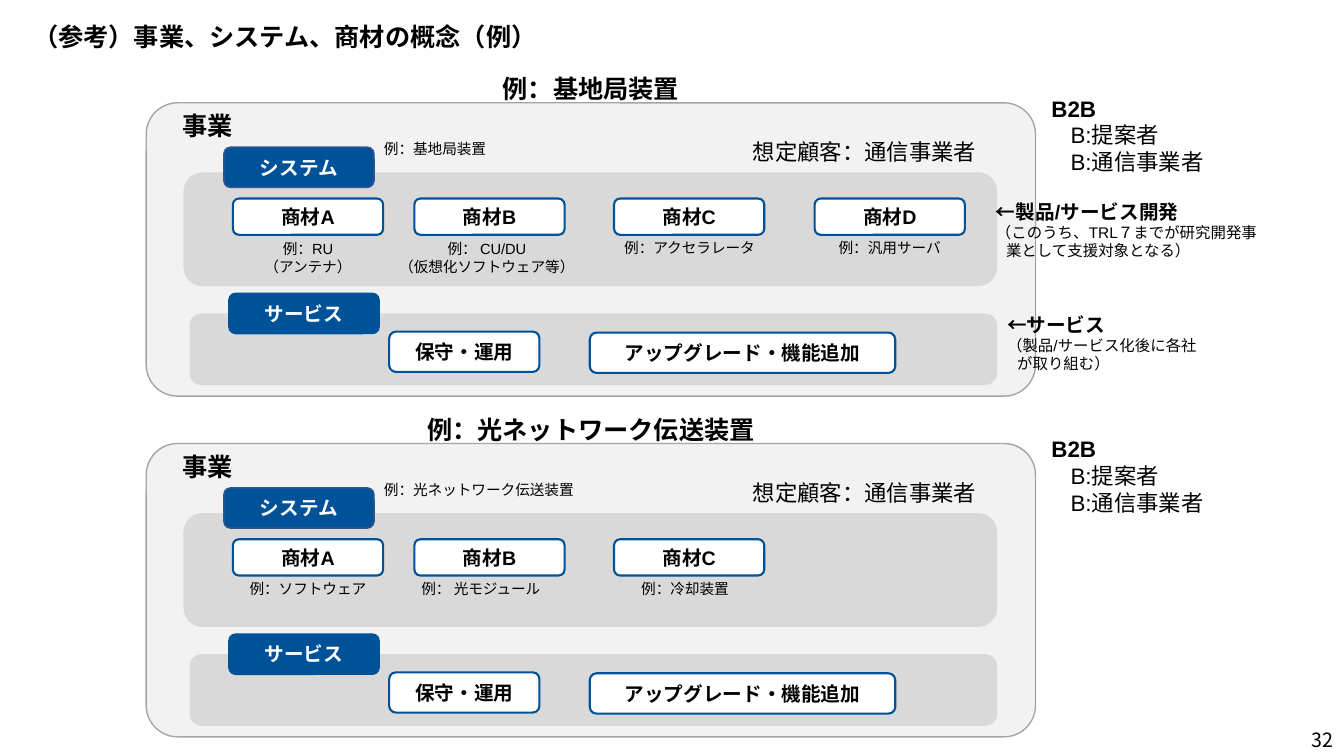
"""Build the slide on businesses, systems and products for two network examples."""
import pptx
import pptx.dml.color
import pptx.enum.shapes
import pptx.enum.text
import pptx.oxml
import pptx.oxml.ns
import pptx.util

COLORS = {
    "black": "000000", "white": "FFFFFF", "panel": "F2F2F2", "panel_line": "A5A5A5",
    "band": "D9D9D9", "blue": "005298", "system_line": "325491",
}
GRID = pptx.util.Inches(0.1)
ASIAN_FONT = "Noto Sans CJK JP"
LEFT = pptx.enum.text.PP_ALIGN.LEFT
CENTER = pptx.enum.text.PP_ALIGN.CENTER
RIGHT = pptx.enum.text.PP_ALIGN.RIGHT
TOP = pptx.enum.text.MSO_ANCHOR.TOP
MIDDLE = pptx.enum.text.MSO_ANCHOR.MIDDLE


def add_text(area, lines, align=LEFT, color="black", font="Arial", anchor=TOP, shape=None):
    """Write (text, size, bold, margin, indent) lines in a shape or a new text box."""
    if shape is None:
        shape = slide.shapes.add_textbox(*[round(length * GRID) for length in area])
    frame = shape.text_frame
    frame.word_wrap = True
    frame.vertical_anchor = anchor
    for index, (text, size, bold, margin, indent) in enumerate(lines):
        paragraph = frame.paragraphs[0] if index == 0 else frame.add_paragraph()
        paragraph.alignment = align
        properties = paragraph._p.get_or_add_pPr()
        properties.set("marL", str(round(margin * GRID)))
        properties.set("indent", str(round(indent * GRID)))
        run = paragraph.add_run()
        run.text = text
        run.font.size = pptx.util.Pt(size)
        run.font.bold = bold
        run.font.name = font
        run.font.color.rgb = pptx.dml.color.RGBColor.from_string(COLORS[color])
        asian = pptx.oxml.parse_xml(
            f'<a:ea {pptx.oxml.ns.nsdecls("a")} typeface="{ASIAN_FONT}"/>')
        run._r.get_or_add_rPr().append(asian)


def add_box(area, fill, line=None, width=1, text=None, color="black", corner=0.16667):
    """Draw a rounded box, with a centred bold label if text is given."""
    shape = slide.shapes.add_shape(
        pptx.enum.shapes.MSO_SHAPE.ROUNDED_RECTANGLE,
        *[round(length * GRID) for length in area])
    shape.adjustments[0] = corner
    shape.shadow.inherit = False
    shape.fill.solid()
    shape.fill.fore_color.rgb = pptx.dml.color.RGBColor.from_string(COLORS[fill])
    if line:
        shape.line.color.rgb = pptx.dml.color.RGBColor.from_string(COLORS[line])
        shape.line.width = pptx.util.Pt(width)
    else:
        shape.line.fill.background()
    if text:
        add_text(area, [(text, 14, True, 0, 0)], CENTER, color, anchor=MIDDLE, shape=shape)


presentation = pptx.Presentation()
presentation.slide_width = pptx.util.Inches(13.33)
presentation.slide_height = pptx.util.Inches(7.5)
slide = presentation.slides.add_slide(presentation.slide_layouts[6])

add_text((2.3, 1.6, 115, 4), [("（参考）事業、システム、商材の概念（例）", 18, True, 0, 0)],
         font=ASIAN_FONT, anchor=MIDDLE)
add_text((124.7, 71.9, 8.5, 2.9), [("32", 14, False, 0, 0)], RIGHT,
         font=ASIAN_FONT, anchor=MIDDLE)

product_columns = [23.1, 41.1, 60.9, 80.8]
panels = [
    (10.2, "例：基地局装置", "Arial", [
        ("商材A", ["例：RU", "（アンテナ）"], 30.55),
        ("商材B", ["例： CU/DU", "（仮想化ソフトウェア等）"], 48.3),
        ("商材C", ["例：アクセラレータ"], 68.4),
        ("商材D", ["例：汎用サーバ"], 88.25),
    ]),
    (44, "例：光ネットワーク伝送装置", ASIAN_FONT, [
        ("商材A", ["例：ソフトウェア"], 30.55),
        ("商材B", ["例： 光モジュール"], 47.7),
        ("商材C", ["例：冷却装置"], 67.95),
    ]),
]
for top, example, example_font, products in panels:
    add_box((14.5, top, 88.2, 29.1), "panel", "panel_line", corner=0.107)
    add_text((14.5, top - 3.4, 88.2, 4), [(example, 18, True, 0, 0)], CENTER)
    add_text((17.1, top + 0.3, 11.9, 4), [("事業", 18, True, 0, 0)])
    add_text((73.7, top + 3, 27.6, 3.7), [("想定顧客：通信事業者", 16, False, 0, 0)])

    add_box((18.2, top + 6.9, 80.7, 11.3), "band")
    add_box((22.2, top + 4.4, 14.9, 4), "blue", "system_line", 1, "システム", "white")
    add_text((37.1, top + 3.2, 21.4, 2.9), [(example, 10.5, False, 0, 0)], font=example_font)
    for column, (product, captions, center) in zip(product_columns, products):
        add_box((column, top + 9.5, 14.9, 3.6), "white", "blue", 1.5, product)
        add_text((center - 10.8, top + 12.9 + 0.1 * len(captions), 21.6, 2.8),
                 [(caption, 10.5, False, 0, 0) for caption in captions], CENTER)

    add_box((18.8, top + 20.9, 80.1, 7.1), "band")
    add_box((22.7, top + 18.9, 14.9, 4), "blue", "blue", 1, "サービス", "white")
    add_box((38.6, top + 22.7, 14.9, 4), "white", "blue", 1.5, "保守・運用")
    add_box((58.5, top + 22.8, 30.3, 4), "white", "blue", 1.5, "アップグレード・機能追加")

    add_text((103.3, top - 1.3, 20.9, 9.1), [
        ("B2B", 16, True, 0, 0),
        ("B:提案者", 16, False, 1.9, 0),
        ("B:通信事業者", 16, False, 1.9, 0),
    ])

side_notes = [
    ((97.8, 19.3, 28.2, 7.1), "←製品/サービス開発",
     "（このうち、TRL７までが研究開発事業として支援対象となる）"),
    ((98.9, 30.5, 20.9, 7.1), "←サービス", "（製品/サービス化後に各社が取り組む）"),
]
for area, heading, detail in side_notes:
    add_text(area, [(heading, 14, True, 0, 0), (detail, 11, False, 1, -1)])

presentation.save("out.pptx")
